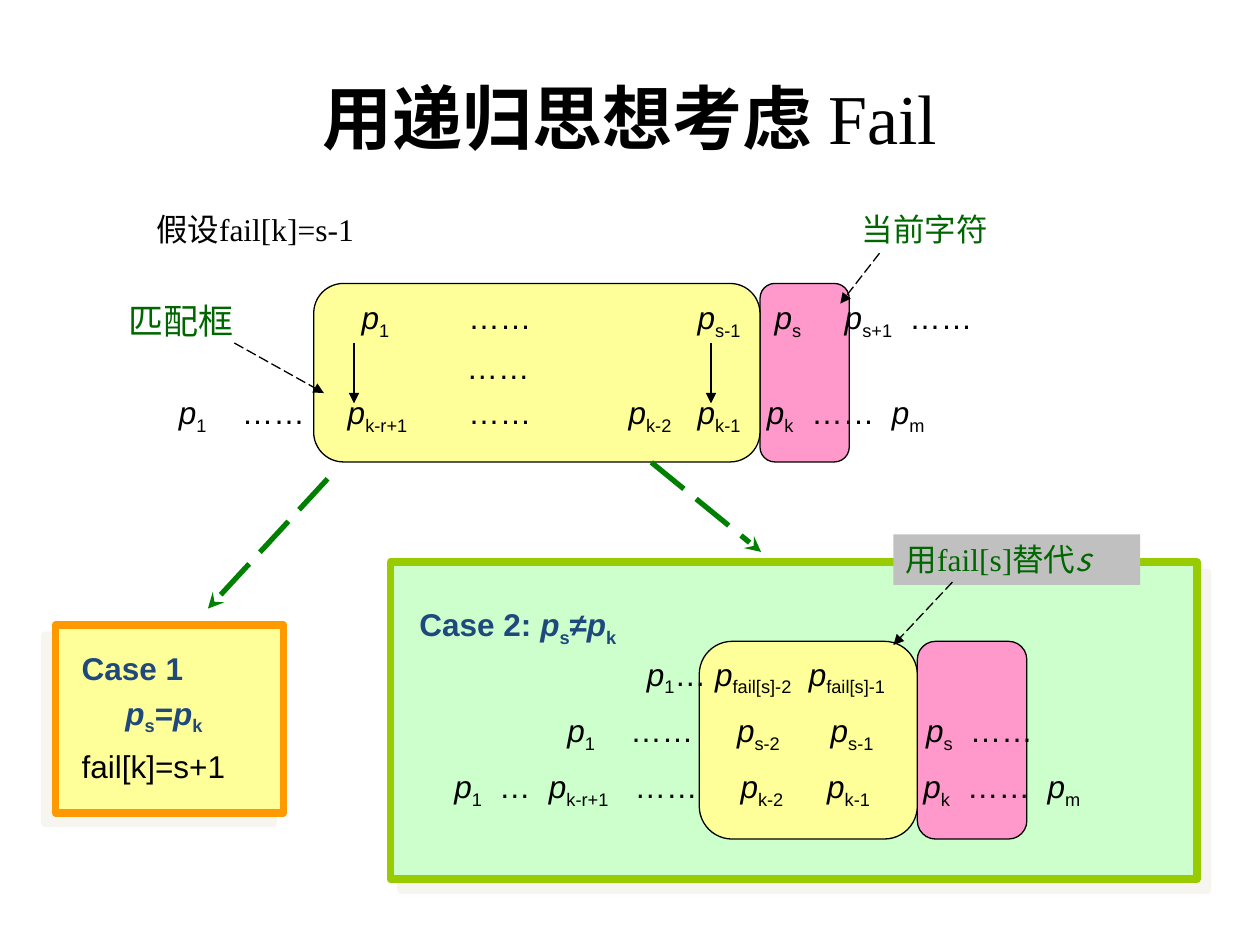
from dataclasses import dataclass

from pptx import Presentation
from pptx.dml.color import RGBColor
from pptx.enum import dml, shapes, text
from pptx.oxml import parse_xml
from pptx.oxml.ns import nsdecls, qn
from pptx.util import Pt


@dataclass(frozen=True)
class Theme:
    black: str = "000000"
    yellow: str = "FFFF99"
    pink: str = "FF99CC"
    mint: str = "CCFFCC"
    lime: str = "99CC00"
    orange: str = "FF9900"
    grey: str = "C0C0C0"
    shade: str = "EEECE1"
    navy: str = "1F497D"
    label: str = "006600"
    arrow: str = "008000"
    sans: str = "Arial"
    narrow: str = "Arial Narrow"
    serif: str = "Times New Roman"
    cjk: str = "Noto Sans CJK SC"
    title: int = 40
    large: int = 20
    body: int = 18
    thin: float = 0.75
    thick: float = 3
    frame: float = 4.5


T = Theme()


def add_text(p, words, font=T.sans, size=T.body, color=T.black, bold=False,
             italic=False, sub=False):
    r = p.add_run()
    r.text = words
    f = r.font
    f.name, f.size, f.bold, f.italic = font, Pt(size), bold, italic
    f.color.rgb = RGBColor.from_string(color)
    rPr = r._r.get_or_add_rPr()
    rPr.find(qn("a:latin")).addnext(
        parse_xml(f'<a:ea {nsdecls("a")} typeface="{T.cjk}"/>'))
    if sub:
        rPr.set("baseline", "-25000")


def add_row(p, items, before=0, **fmt):
    """Write (tab, token) items; p_x is an italic p with subscript x, tab None joins on."""
    stops = [tab for tab, _ in items if tab is not None]
    if stops:
        tabs = "".join(f'<a:tab pos="{Pt(x)}" algn="l"/>' for x in stops)
        p._p.get_or_add_pPr().append(
            parse_xml(f'<a:tabLst {nsdecls("a")}>{tabs}</a:tabLst>'))
    p.space_before = Pt(before)
    for tab, token in items:
        if tab is not None:
            add_text(p, "\t", **fmt)
        base, _, index = token.partition("_")
        add_text(p, base, italic=bool(index), **fmt)
        if index:
            add_text(p, index, sub=True, **fmt)


def add_box(slide, box):
    sp = slide.shapes.add_textbox(*map(Pt, box))
    sp.text_frame.word_wrap = True
    return sp.text_frame


def add_rows(tf, rows):
    """Write (items, space before, format) rows, one paragraph each."""
    for i, (items, before, fmt) in enumerate(rows):
        p = tf.add_paragraph() if i else tf.paragraphs[0]
        add_row(p, items, before, **fmt)


def add_panel(slide, box, fill, line=None, width=T.thin, rounded=False, shadow=None):
    """Draw a filled box; shadow is the direction of a hard shadow in degrees."""
    kind = shapes.MSO_SHAPE.ROUNDED_RECTANGLE if rounded else shapes.MSO_SHAPE.RECTANGLE
    sp = slide.shapes.add_shape(kind, *map(Pt, box))
    sp.shadow.inherit = False
    sp.fill.solid()
    sp.fill.fore_color.rgb = RGBColor.from_string(fill)
    if line:
        sp.line.color.rgb = RGBColor.from_string(line)
        sp.line.width = Pt(width)
    else:
        sp.line.fill.background()
    if shadow is not None:
        sp._element.spPr.find(qn("a:effectLst")).append(parse_xml(
            f'<a:outerShdw {nsdecls("a")} dist="{Pt(8.5)}" dir="{shadow * 60000}" '
            f'algn="ctr" rotWithShape="0"><a:srgbClr val="{T.shade}">'
            '<a:alpha val="50000"/></a:srgbClr></a:outerShdw>'))
    return sp


def add_arrow(slide, start, end, color=T.black, width=T.thin, dashed=True, head="triangle"):
    c = slide.shapes.add_connector(shapes.MSO_CONNECTOR.STRAIGHT, *map(Pt, start + end))
    c.line.color.rgb = RGBColor.from_string(color)
    c.line.width = Pt(width)
    if dashed:
        c.line.dash_style = dml.MSO_LINE.LONG_DASH
    c.line._get_or_add_ln().append(parse_xml(f'<a:tailEnd {nsdecls("a")} type="{head}"/>'))
    c._element.spPr.append(parse_xml(f'<a:effectLst {nsdecls("a")}/>'))


def add_window(slide, box, match_width):
    """Split the box into the matched part and the current character."""
    x, y, w, h = box
    add_panel(slide, (x + match_width, y, w - match_width, h), T.pink, T.black, rounded=True)
    add_panel(slide, (x, y, match_width, h), T.yellow, T.black, rounded=True)


def add_title(slide, box):
    sp = slide.shapes.title
    sp.left, sp.top, sp.width, sp.height = map(Pt, box)
    sp.text_frame.vertical_anchor = text.MSO_ANCHOR.MIDDLE
    p = sp.text_frame.paragraphs[0]
    p.alignment = text.PP_ALIGN.CENTER
    add_text(p, "用递归思想考虑 ", font=T.narrow, size=T.title, bold=True)
    add_text(p, "Fail", font=T.serif, size=T.title)


def add_matching(slide, box):
    x, y, w, h = box
    add_window(slide, box, 255)
    add_rows(add_box(slide, (x - 108.7, y + 5, 600, 84)), [
        ([(129, "p_1"), (190, "……"), (321, "p_s-1"), (365, "p_s"),
          (405, "p_s+1"), (442, "……")], 0, {}),
        ([(189, "……")], 4, {}),
        ([(24.5, "p_1"), (60.5, "……"), (121, "p_k-r+1"), (190, "……"), (281.5, "p_k-2"),
          (321, "p_k-1"), (360.5, "p_k"), (386, "……"), (432, "p_m")], 4, {})])
    for dx in (23, 227):
        add_arrow(slide, (x + dx, y + 34), (x + dx, y + 68.5), dashed=False)

    p = add_box(slide, (x - 97.2, y - 45.4, 262, 29)).paragraphs[0]
    add_text(p, "假设")
    add_text(p, "fail[k]=s-1", font=T.serif)
    p = add_box(slide, (x + 306, y - 45.4, 101.5, 29)).paragraphs[0]
    add_text(p, "当前字符", font=T.cjk, color=T.label)
    add_arrow(slide, (x + 323.3, y - 17.3), (x + 300.9, y + 11.5))
    p = add_box(slide, (x - 113, y + 5.8, 102, 32)).paragraphs[0]
    add_text(p, "匹配框", font=T.cjk, size=T.large, color=T.label)
    add_arrow(slide, (x - 45.4, y + 34), (x + 5.8, y + 62.6))


def add_case_1(slide, box):
    x, y, w, h = box
    head = dict(color=T.navy, bold=True)
    add_panel(slide, box, T.yellow, T.orange, T.frame, shadow=135)
    add_rows(add_box(slide, (x + 7.9, y + 10.1, 114, 83)), [
        ([(None, "Case 1")], 0, head),
        ([(25, "p_s"), (None, "="), (None, "p_k")], 4, head),
        ([(None, "fail[k]=s+1")], 6, {})])


def add_case_2(slide, box):
    x, y, w, h = box
    add_panel(slide, box, T.mint, T.lime, T.frame, shadow=45)
    add_window(slide, (x + 176.4, y + 45.4, 187.2, 113), 124.6)
    add_rows(add_box(slide, (x + 9.4, y + 20.9, 473, 117)), [
        ([(None, "Case 2: "), (None, "p_s"), (None, "≠"), (None, "p_k")], 0,
         dict(color=T.navy, bold=True)),
        ([(130, "p_1"), (None, "…"), (169, "p_fail[s]-2"), (222.5, "p_fail[s]-1")], 4, {}),
        ([(84.5, "p_1"), (120.5, "……"), (181.5, "p_s-2"), (235, "p_s-1"),
          (289.5, "p_s"), (314.5, "……")], 7.5, {}),
        ([(20, "p_1"), (45.5, "…"), (74, "p_k-r+1"), (123, "……"), (183.5, "p_k-2"),
          (233, "p_k-1"), (288, "p_k"), (313, "……"), (359, "p_m")], 7.5, {})])

    note = add_panel(slide, (x + 287.3, y - 15.8, 141, 29), T.grey)
    tf = note.text_frame
    tf.vertical_anchor = text.MSO_ANCHOR.TOP
    p = tf.paragraphs[0]
    p.alignment = text.PP_ALIGN.LEFT
    for words, font in (("用", T.cjk), ("fail[s]", T.serif), ("替代", T.cjk), ("s", T.cjk)):
        add_text(p, words, font=font, color=T.label, italic=words == "s")
    add_arrow(slide, (x + 321.1, y + 11.5), (x + 287.3, y + 47.5))


def main():
    prs = Presentation()
    prs.slide_width, prs.slide_height = Pt(720), Pt(540)
    slide = prs.slides.add_slide(prs.slide_layouts[5])
    add_title(slide, (36, 21.6, 648, 90))
    add_matching(slide, (179.3, 162, 306, 102))
    add_case_1(slide, (31.7, 357.1, 130.3, 107.3))
    add_case_2(slide, (223.2, 321.1, 460.8, 181.4))
    for start, end in (((187.2, 273.6), (118.8, 347.8)), ((372.2, 264.2), (434.9, 315.4))):
        add_arrow(slide, start, end, T.arrow, T.thick, head="stealth")
    prs.save("out.pptx")


if __name__ == "__main__":
    main()
